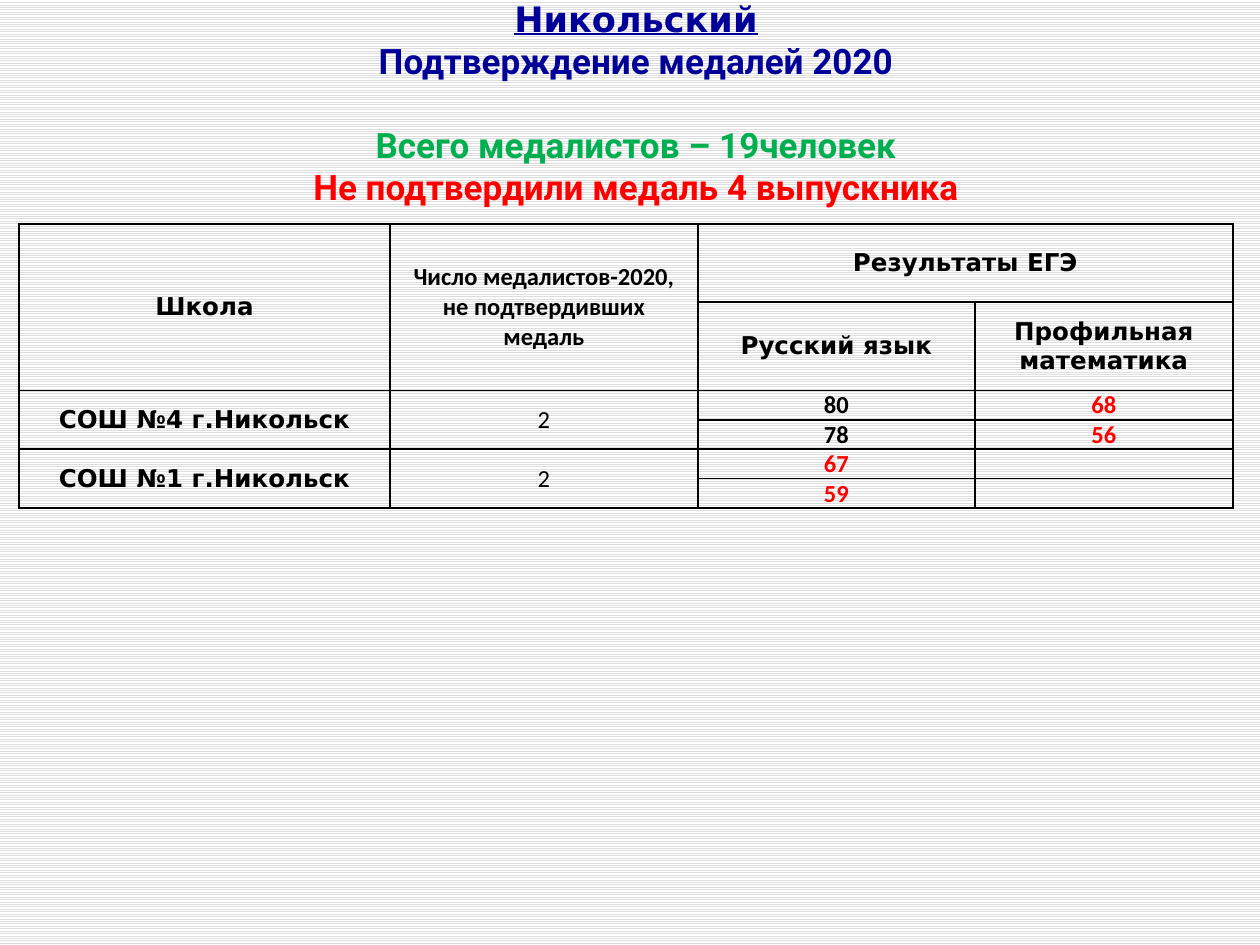
from lxml import etree
from pptx import Presentation, util as u
from pptx.dml.color import RGBColor
from pptx.enum import dml, text
from pptx.oxml import ns

EMU_PER_PX = 914400 / 126
COLORS = {"navy": "000099", "green": "00B050", "red": "FF0000",
          "black": "000000", "stripe": "DDDDDD", "white": "FFFFFF"}
SANS, ROBOTO, CALIBRI = "DejaVu Sans", "Roboto", "Calibri"
CELL_SIZE = 14

# Text, font, colour, underline, space before in points
TITLE = [
    ("Никольский", SANS, "navy", True, 0),
    ("Подтверждение медалей 2020", ROBOTO, "navy", False, 0),
    ("Всего медалистов – 19человек", ROBOTO, "green", False, 24),
    ("Не подтвердили медаль 4 выпускника", ROBOTO, "red", False, 0),
]
COLUMNS = [371, 308, 277, 258]
ROWS = [78, 60] + [29] * 4
# First and last (row, column) of each merged block
MERGES = [((0, 2), (0, 3))] + [
    ((row, column), (row + 1, column)) for row in (0, 2, 4) for column in (0, 1)]
# Row, column, text, font
HEADERS = [
    (0, 0, "Школа", SANS),
    (0, 1, "Число медалистов-2020, не подтвердивших медаль", CALIBRI),
    (0, 2, "Результаты ЕГЭ", SANS),
    (1, 2, "Русский язык", SANS),
    (1, 3, "Профильная математика", SANS),
]
# School, number of medallists, (Russian, maths) scores
SCHOOLS = [
    ("СОШ №4 г.Никольск", "2", [("80", "68"), ("78", "56")]),
    ("СОШ №1 г.Никольск", "2", [("67", ""), ("59", "")]),
]
PASS_SCORE = 70


def px(number):
    return u.Emu(round(number * EMU_PER_PX))


def rgb(name):
    return RGBColor.from_string(COLORS[name])


def add_span(para, words, color, **font_format):
    para.alignment = text.PP_ALIGN.CENTER
    span = para.add_run()
    span.text = words
    for name, value in font_format.items():
        setattr(span.font, name, value)
    span.font.color.rgb = rgb(color)


def paint_background(page):
    fill = page.background.fill
    fill.patterned()
    fill.pattern = dml.MSO_PATTERN.LIGHT_HORIZONTAL
    fill.fore_color.rgb = rgb("stripe")
    fill.back_color.rgb = rgb("white")


def add_title(page):
    box = page.shapes.add_textbox(px(16), px(0), px(1240), px(214))
    frame = box.text_frame
    frame.word_wrap = True
    frame.vertical_anchor = text.MSO_ANCHOR.BOTTOM
    for index, (words, font, color, underline, gap) in enumerate(TITLE):
        para = frame.add_paragraph() if index else frame.paragraphs[0]
        if gap:
            para.space_before = u.Pt(gap)
        add_span(para, words, color, name=font, size=u.Pt(20),
                 bold=True, underline=underline)


def prepare_cell(cell):
    """Give a cell black borders, no fill, its margins and its text size."""
    properties = cell._tc.get_or_add_tcPr()
    for side in ("lnL", "lnR", "lnT", "lnB"):
        line = etree.SubElement(properties, ns.qn(f"a:{side}"), w=str(u.Pt(1)))
        solid = etree.SubElement(line, ns.qn("a:solidFill"))
        etree.SubElement(solid, ns.qn("a:srgbClr"), val=COLORS["black"])
    cell.fill.background()
    layout = {"margin_left": px(10), "margin_right": px(10), "margin_top": 0,
              "margin_bottom": 0, "vertical_anchor": text.MSO_ANCHOR.MIDDLE}
    for name, value in layout.items():
        setattr(cell, name, value)
    # Keeps empty cells from stretching their row
    etree.SubElement(cell.text_frame.paragraphs[0]._p, ns.qn("a:endParaRPr"),
                     sz=str(CELL_SIZE * 100))


def fill_cell(cell, words, font, color="black", bold=True):
    add_span(cell.text_frame.paragraphs[0], words, color, name=font,
             size=u.Pt(CELL_SIZE), bold=bold)


def add_score(cell, score):
    if score:
        color = "black" if int(score) >= PASS_SCORE else "red"
        fill_cell(cell, score, CALIBRI, color)


def add_results(page):
    frame = page.shapes.add_table(len(ROWS), len(COLUMNS), px(19), px(224),
                                  px(sum(COLUMNS)), px(sum(ROWS)))
    table = frame.table
    table.first_row = table.horz_banding = False
    for column, width in zip(table.columns, COLUMNS):
        column.width = px(width)
    for row, height in zip(table.rows, ROWS):
        row.height = px(height)
    for cell in table.iter_cells():
        prepare_cell(cell)
    for first, last in MERGES:
        table.cell(*first).merge(table.cell(*last))

    # Header
    for row, column, words, font in HEADERS:
        fill_cell(table.cell(row, column), words, font)

    # Two score rows for each school
    for index, (school, number, scores) in enumerate(SCHOOLS):
        top = 2 + 2 * index
        fill_cell(table.cell(top, 0), school, SANS)
        fill_cell(table.cell(top, 1), number, CALIBRI, bold=False)
        for row, pair in enumerate(scores, top):
            for column, score in enumerate(pair, 2):
                add_score(table.cell(row, column), score)
            table.cell(row, 2).vertical_anchor = text.MSO_ANCHOR.TOP


def main():
    deck = Presentation()
    deck.slide_width, deck.slide_height = px(1260), px(945)
    page = deck.slides.add_slide(deck.slide_layouts[6])
    paint_background(page)
    add_title(page)
    add_results(page)
    deck.save("out.pptx")


if __name__ == "__main__":
    main()
